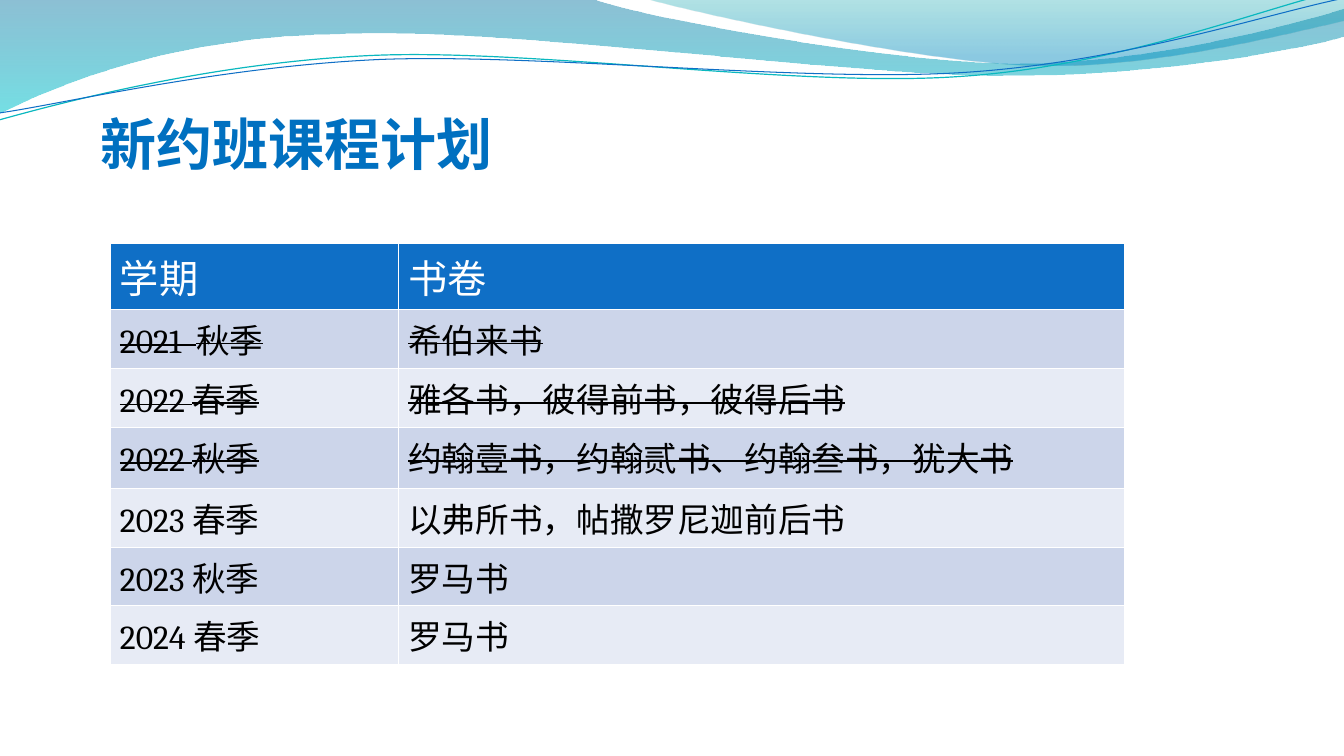
import itertools

import lxml.etree
import pptx
import pptx.dml.color
import pptx.enum.text
import pptx.oxml.ns
import pptx.util

COLORS = {
    "title": "0070C0", "header": "0F6FC6", "odd": "CCD5EA", "even": "E7EBF5",
    "white": "FFFFFF", "text": "000000", "teal_line": "0AB8BF", "blue_line": "0F6FC6",
    "deep_blue": "0074A1", "cyan": "00C6CF", "teal": "00A1A9", "sky": "008BBF",
}
COURSES = [
    ("2021  秋季", "希伯来书", True),
    ("2022 春季", "雅各书，彼得前书，彼得后书", True),
    ("2022 秋季", "约翰壹书，约翰贰书、约翰叁书，犹大书", True),
    ("2023 春季", "以弗所书，帖撒罗尼迦前后书", False),
    ("2023 秋季", "罗马书", False),
    ("2024 春季", "罗马书", False),
]
BROAD_WAVE = [
    [(0, 0)],
    [(5.87, -0.01)],
    [(6.34, 0.17), (8.85, 0.63), (10.11, 0.63)],
    [(11.38, 0.63), (12.78, 0.26), (13.33, 0.09)],
    [(13.35, 0.36)],
    [(13.11, 0.44), (11.6, 0.76), (9.94, 0.75)],
    [(8.29, 0.75), (5.09, 0.28), (3.43, 0.34)],
    [(1.72, 0.36), (0.61, 0.83), (-0.01, 1.13)],
    [(0, 0)],
]
RIGHT_WAVE = [
    [(6.39, -0.01)],
    [(6.79, 0.11), (9.09, 0.62), (10.25, 0.65)],
    [(11.41, 0.69), (12.82, 0.32), (13.33, 0.21)],
    [(13.33, 0)],
    [(6.39, -0.01)],
]
TEAL_CURVE = [
    [(-0.01, 1.19)],
    [(0.64, 1.01), (2.11, 0.62), (3.69, 0.55)],
    [(5.27, 0.48), (7.9, 0.87), (9.5, 0.76)],
    [(11.1, 0.66), (12.52, 0.08), (13.31, -0.1)],
]
BLUE_CURVE = [
    [(0, 1.12)],
    [(0.63, 1.03), (2.18, 0.66), (3.78, 0.59)],
    [(5.37, 0.53), (7.96, 0.82), (9.55, 0.72)],
    [(11.15, 0.62), (12.55, 0.14), (13.34, -0.02)],
]


class CoursePage:
    """Draw the course plan on a grid of 13.33 columns by 7.5 rows."""

    columns, rows = 13.33, 7.5
    latin, asian = "Cambria", "Noto Sans CJK SC"

    def __init__(self, deck):
        self.column = deck.slide_width / self.columns
        self.row = deck.slide_height / self.rows
        self.page = deck.slides.add_slide(deck.slide_layouts[6])

    def across(self, count):
        return round(count * self.column)

    def down(self, count):
        return round(count * self.row)

    def color(self, name):
        return pptx.dml.color.RGBColor.from_string(COLORS[name])

    def element(self, parent, tag, **attributes):
        return lxml.etree.SubElement(parent, pptx.oxml.ns.qn(tag), attributes)

    def outline(self, segments, close):
        points = [(self.across(x), self.down(y)) for x, y in itertools.chain(*segments)]
        builder = self.page.shapes.build_freeform(*points[0], scale=1.0)
        builder.add_line_segments(points[1:], close=close)
        shape = builder.convert_to_shape()
        shape.shadow.inherit = False
        lines = iter(list(shape._element.spPr.iter(pptx.oxml.ns.qn("a:lnTo"))))
        for segment in segments[1:]:
            group = list(itertools.islice(lines, len(segment)))
            if len(group) == 3:
                bend = lxml.etree.Element(pptx.oxml.ns.qn("a:cubicBezTo"))
                group[0].addprevious(bend)
                for line in group:
                    bend.append(line[0])
                    line.getparent().remove(line)
        return shape

    def wave(self, segments, stops):
        shape = self.outline(segments, True)
        shape.line.fill.background()
        shape.fill.gradient()
        shape.fill.gradient_angle = 270
        for stop, (position, color, _) in zip(shape.fill.gradient_stops, stops):
            stop.position = position
            stop.color.rgb = self.color(color)
        paints = shape._element.spPr.iter(pptx.oxml.ns.qn("a:srgbClr"))
        for paint, (_, _, opacity) in zip(paints, stops):
            self.element(paint, "a:alpha", val=str(opacity * 1000))

    def curve(self, segments, color, weight):
        shape = self.outline(segments, False)
        shape.fill.background()
        shape.line.color.rgb = self.color(color)
        shape.line.width = pptx.util.Pt(weight)

    def span(self, para, text, size, color, latin, bold=False, strike=False):
        span = para.add_run()
        span.text = text
        span.font.size = pptx.util.Pt(size)
        span.font.name = latin
        span.font.bold = bold
        span.font.color.rgb = self.color(color)
        properties = span._r.get_or_add_rPr()
        self.element(properties, "a:ea", typeface=self.asian)
        if strike:
            properties.set("strike", "sngStrike")

    def title(self, text, left, top, width, height):
        box = self.page.shapes.add_textbox(
            self.across(left), self.down(top), self.across(width), self.down(height))
        frame = box.text_frame
        frame.word_wrap = True
        frame.vertical_anchor = pptx.enum.text.MSO_ANCHOR.BOTTOM
        frame.margin_left = frame.margin_right = frame.margin_bottom = 0
        self.span(frame.paragraphs[0], text, 40, "title", self.asian, bold=True)

    def cell(self, cell, text, size, color, fill, strike):
        properties = cell._tc.get_or_add_tcPr()
        for side in ("a:lnL", "a:lnR", "a:lnT", "a:lnB"):
            border = self.element(properties, side, w=str(pptx.util.Pt(1)))
            paint = self.element(border, "a:solidFill")
            self.element(paint, "a:srgbClr", val=COLORS["white"])
        cell.fill.solid()
        cell.fill.fore_color.rgb = self.color(fill)
        self.span(cell.text_frame.paragraphs[0], text, size, color, self.latin, strike=strike)

    def table(self, header, courses, left, top, widths, heights):
        table = self.page.shapes.add_table(
            len(heights), len(widths), self.across(left), self.down(top),
            self.across(sum(widths)), self.down(sum(heights))).table
        table.first_row = table.horz_banding = False
        for column, width in zip(table.columns, widths):
            column.width = self.across(width)
        for row, height in zip(table.rows, heights):
            row.height = self.down(height)
        for number, (*texts, strike) in enumerate([(*header, False), *courses]):
            style = (24, "text", "odd" if number % 2 else "even") if number else (28, "white", "header")
            for position, text in enumerate(texts):
                self.cell(table.cell(number, position), text, *style, strike)


def main():
    deck = pptx.Presentation()
    deck.slide_width = pptx.util.Inches(13.33)
    deck.slide_height = pptx.util.Inches(7.5)
    page = CoursePage(deck)
    page.wave(BROAD_WAVE, [(0, "deep_blue", 45), (1, "cyan", 55)])
    page.wave(RIGHT_WAVE, [(0, "teal", 30), (0.8, "sky", 45)])
    page.curve(TEAL_CURVE, "teal_line", 0.85)
    page.curve(BLUE_CURVE, "blue_line", 0.75)
    page.title("新约班课程计划", 1, 0.83, 9, 0.92)
    page.table(("学期", "书卷"), COURSES, 1.09, 2.41, (2.86, 7.2),
               (0.66, 0.59, 0.58, 0.61, 0.58, 0.58, 0.58))
    deck.save("out.pptx")


if __name__ == "__main__":
    main()
